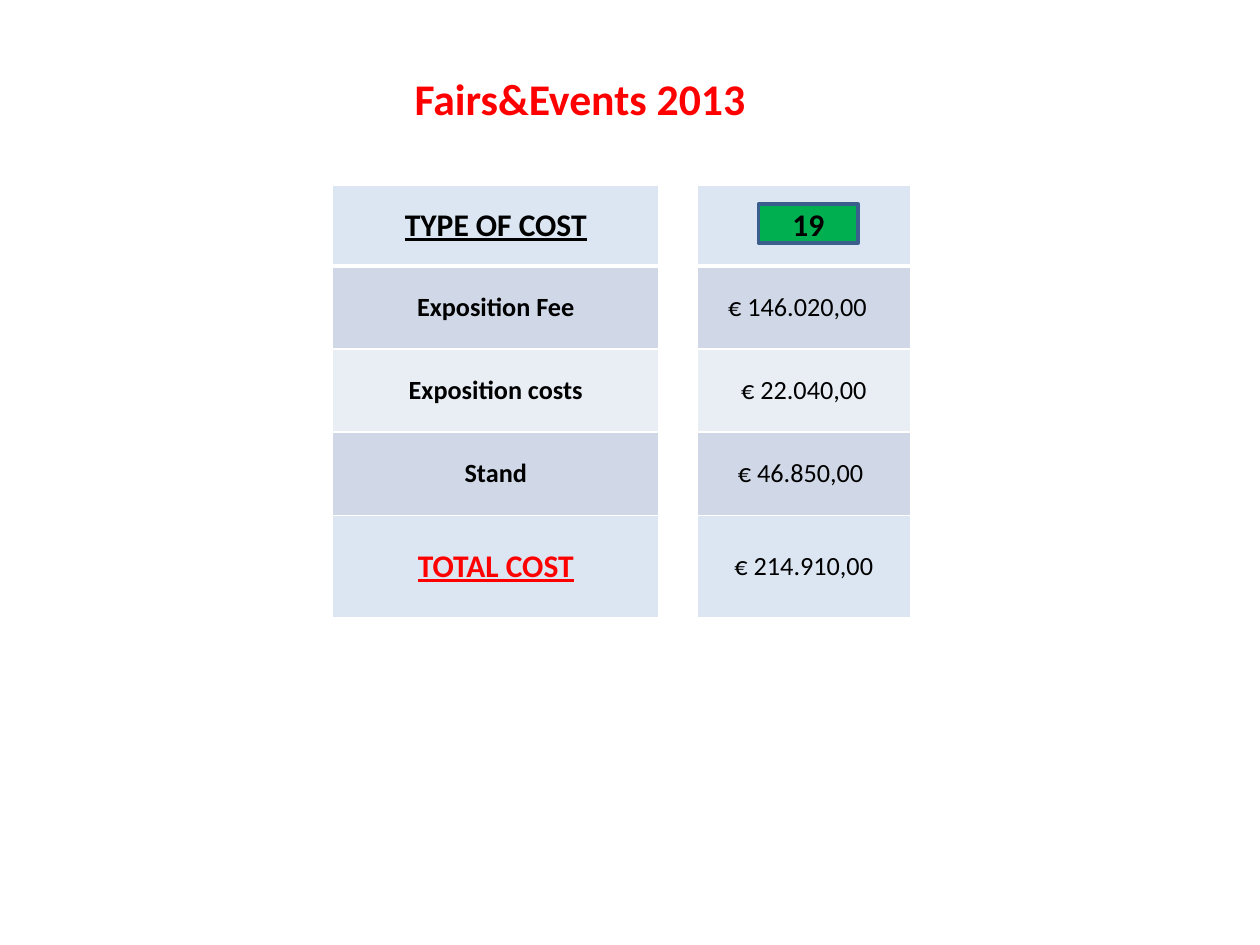
from dataclasses import dataclass
from lxml import etree
from pptx import Presentation, util as u
from pptx.dml.color import RGBColor
from pptx.enum import shapes, text
from pptx.oxml.ns import qn

# Content: label, amount, extra right margin of the amount
TITLE = "Fairs&Events 2013"
COUNT = "19"
HEAD = "TYPE OF COST"
COSTS = [
    ("Exposition Fee", "€ 146.020,00", 0.1),
    ("Exposition costs", "€ 22.040,00", 0),
    ("Stand", "€ 46.850,00", 0.05),
]
TOTAL = ("TOTAL COST", "€ 214.910,00", 0)


@dataclass(frozen=True)
class Theme:
    font: str = "Calibri"
    ink: str = "000000"
    red: str = "FF0000"
    white: str = "FFFFFF"
    pale: str = "DCE6F2"
    bands: tuple = ("D0D8E8", "E9EDF4")
    green: str = "00B050"
    edge: str = "3A5F8C"
    title: int = 25
    head: int = 18
    body: int = 15


T = Theme()
COLS = (2.59, 0.3, 1.7)
ROWS = (0.64, 0.66, 0.66, 0.66, 0.81, 0.66)
LEFT, TOP = 2.64, 1.47


def rgb(code):
    return RGBColor.from_string(code)


def paint(item, code):
    item.fill.solid()
    item.fill.fore_color.rgb = rgb(code)


def write(frame, words, size, color=T.ink, bold=True, line=False,
          align=text.PP_ALIGN.CENTER):
    para = frame.paragraphs[0]
    para.text = words
    para.alignment = align
    font = para.font
    font.name, font.size, font.bold = T.font, u.Pt(size), bold
    font.underline = line
    font.color.rgb = rgb(color)


def border(cell, widths):
    props = cell._tc.get_or_add_tcPr()
    for side, width in widths.items():
        line = etree.SubElement(props, qn(f"a:ln{side}"), w=str(u.Pt(width)))
        fill = etree.SubElement(line, qn("a:solidFill"))
        etree.SubElement(fill, qn("a:srgbClr"), val=T.white)


def place(shape, left, top, width, height):
    shape.left, shape.top = u.Inches(left), u.Inches(top)
    shape.width, shape.height = u.Inches(width), u.Inches(height)


deck = Presentation()
deck.slide_width, deck.slide_height = u.Inches(10), u.Inches(7.5)
slide = deck.slides.add_slide(deck.slide_layouts[5])

# Title
title = slide.shapes.title
place(title, 3.19, 0.52, 2.86, 0.52)
frame = title.text_frame
frame.word_wrap = False
frame.auto_size = text.MSO_AUTO_SIZE.NONE
frame.vertical_anchor = text.MSO_ANCHOR.TOP
write(frame, TITLE, T.title, T.red, align=text.PP_ALIGN.LEFT)

# Cost table: its middle column and last row stay white
box = [u.Inches(n) for n in (LEFT, TOP, sum(COLS), sum(ROWS))]
table = slide.shapes.add_table(len(ROWS), len(COLS), *box).table
for col, width in zip(table.columns, COLS):
    col.width = u.Inches(width)
for row, height in zip(table.rows, ROWS):
    row.height = u.Inches(height)

bands = [T.bands[i % 2] for i in range(len(COSTS))]
fills = [T.pale, *bands, T.pale, T.white]
for r, shade in enumerate(fills):
    for c in range(len(COLS)):
        cell = table.cell(r, c)
        border(cell, {"L": 1, "R": 1, "T": 3 if r == 1 else 1,
                      "B": 3 if r == 0 else 1})
        paint(cell, T.white if c == 1 else shade)
        cell.vertical_anchor = text.MSO_ANCHOR.MIDDLE

write(table.cell(0, 0).text_frame, HEAD, T.head, line=True)
for r, (label, amount, pad) in enumerate([*COSTS, TOTAL], 1):
    last = r > len(COSTS)
    write(table.cell(r, 0).text_frame, label, T.head if last else T.body,
          T.red if last else T.ink, line=last)
    cell = table.cell(r, 2)
    cell.margin_right = u.Inches(0.1 + pad)
    write(cell.text_frame, amount, T.body, bold=False)

# Event count badge
badge = slide.shapes.add_shape(shapes.MSO_SHAPE.RECTANGLE, 0, 0, 0, 0)
place(badge, 6.02, 1.62, 0.79, 0.31)
badge.shadow.inherit = False
paint(badge, T.green)
badge.line.color.rgb = rgb(T.edge)
badge.line.width = u.Pt(2)
badge.text_frame.vertical_anchor = text.MSO_ANCHOR.MIDDLE
write(badge.text_frame, COUNT, T.head)

deck.save("out.pptx")
